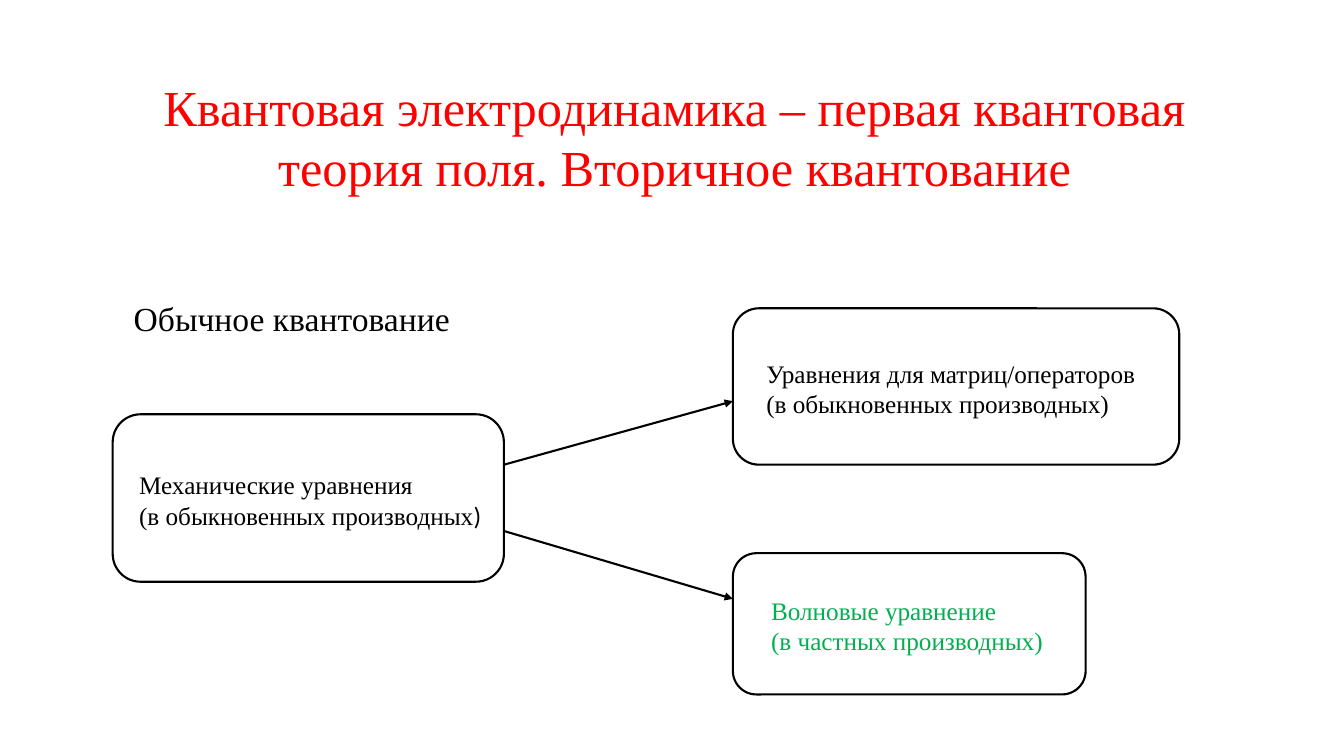
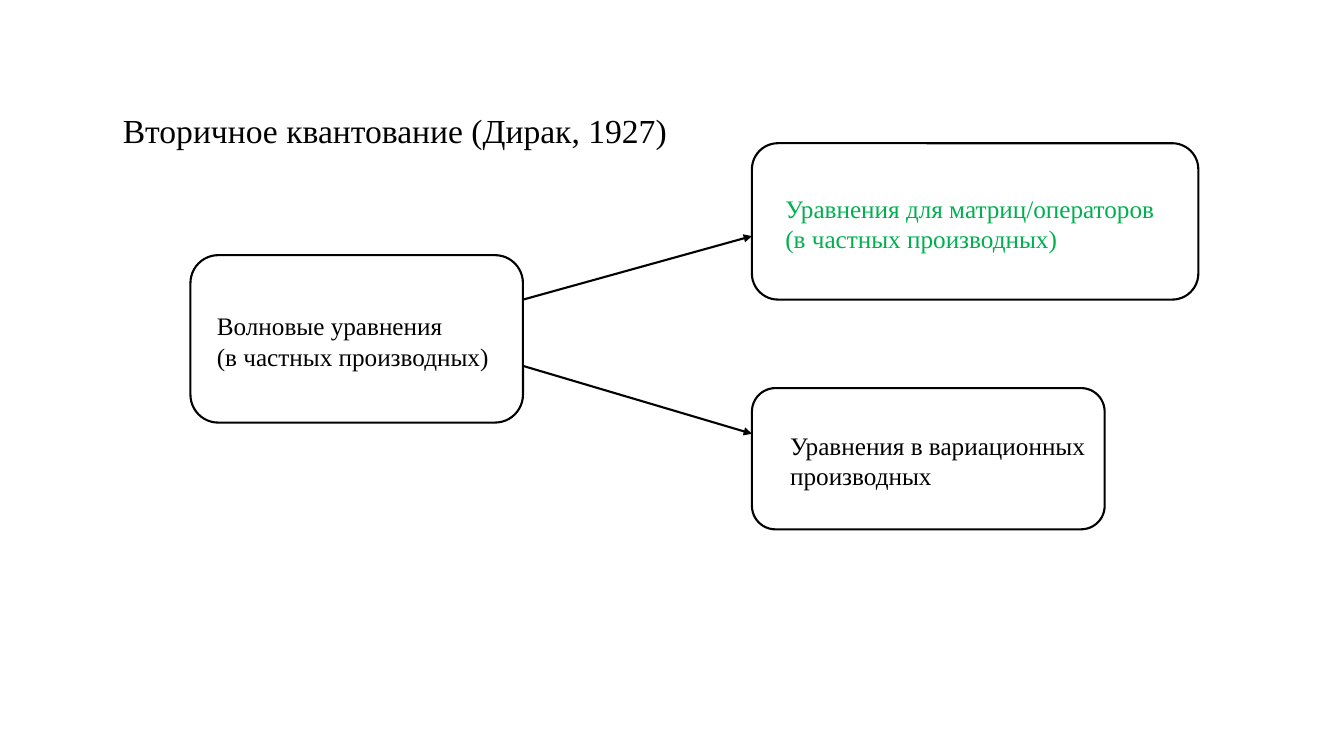
import lxml.etree
import pptx
import pptx.dml.color
import pptx.enum.shapes
import pptx.enum.text
import pptx.oxml.ns
import pptx.util
from pptx.util import Cm

RED = pptx.dml.color.RGBColor(0xFF, 0x00, 0x00)
BLACK = pptx.dml.color.RGBColor(0x00, 0x00, 0x00)
GREEN = pptx.dml.color.RGBColor(0x00, 0xB0, 0x50)
SERIF = "Times New Roman"
SANS = "Calibri"
LINE_WIDTH = pptx.util.Pt(1.5)
LEFT = pptx.enum.text.PP_ALIGN.LEFT
CENTER = pptx.enum.text.PP_ALIGN.CENTER


def write_lines(shape, lines, size, color, align=LEFT):
    """Write lines of (text, font) runs as paragraphs of a shape."""
    frame = shape.text_frame
    frame.word_wrap = True
    frame.auto_size = pptx.enum.text.MSO_AUTO_SIZE.NONE
    for index, line in enumerate(lines):
        para = frame.paragraphs[0] if index == 0 else frame.add_paragraph()
        para.alignment = align
        for text, font in line:
            span = para.add_run()
            span.text = text
            span.font.name = font
            span.font.size = pptx.util.Pt(size)
            span.font.color.rgb = color


def write_heading(shape, box, text, size=24, color=BLACK, align=LEFT):
    """Place and format a title placeholder or a heading text box."""
    shape.left, shape.top, shape.width, shape.height = map(Cm, box)
    shape.text_frame.vertical_anchor = pptx.enum.text.MSO_ANCHOR.TOP
    write_lines(shape, [[(text, SERIF)]], size, color, align)


def add_box(page, box, indent, lines, color=BLACK):
    """Add an outlined rounded box with left-aligned text."""
    shape = page.shapes.add_shape(
        pptx.enum.shapes.MSO_SHAPE.ROUNDED_RECTANGLE, *map(Cm, box))
    shape.shadow.inherit = False
    shape.fill.background()
    shape.line.color.rgb = BLACK
    shape.line.width = LINE_WIDTH
    frame = shape.text_frame
    frame.vertical_anchor = pptx.enum.text.MSO_ANCHOR.MIDDLE
    frame.margin_left, frame.margin_top = Cm(indent), Cm(0.1)
    frame.margin_right = frame.margin_bottom = 0
    write_lines(shape, lines, 18, color)


def add_arrow(page, start, end):
    """Add a straight arrow between two points."""
    arrow = page.shapes.add_connector(
        pptx.enum.shapes.MSO_CONNECTOR.STRAIGHT, *map(Cm, start + end))
    arrow.line.color.rgb = BLACK
    arrow.line.width = LINE_WIDTH
    qn = pptx.oxml.ns.qn
    lxml.etree.SubElement(arrow.line._get_or_add_ln(), qn("a:tailEnd"), type="triangle")
    lxml.etree.SubElement(arrow._element.spPr, qn("a:effectLst"))


def add_fork(page, left, top, hub_width, hub_drop, hub, upper, lower):
    """Draw a hub box with arrows to two boxes; left and top locate the upper box."""
    hub_right = left - 5.77
    add_box(page, (hub_right - hub_width, top + hub_drop, hub_width, 4.22), 0.46, *hub)
    add_box(page, (left, top, 11.25, 3.94), 0.65, *upper)
    add_box(page, (left, top + 6.17, 8.89, 3.56), 0.79, *lower)
    for start_drop, end_drop in ((3.94, 2.34), (5.61, 7.32)):
        add_arrow(page, (hub_right, top + start_drop), (left, top + end_drop))


def add_ordinary_slide(page):
    """Build the slide on ordinary quantization."""
    write_heading(page.shapes.title, (2.21, 1.78, 29.59, 3.33),
                  "Квантовая электродинамика – первая квантовая теория поля. "
                  "Вторичное квантование", 36, RED, CENTER)
    box = (3.12, 7.39, 9.5, 1.27)
    write_heading(page.shapes.add_textbox(*map(Cm, box)), box, "Обычное квантование")
    add_fork(page, 18.47, 7.77, 9.86, 2.67,
             ([[("Механические уравнения", SERIF)],
               [("(в обыкновенных производных", SERIF), (")", SANS)]],),
             ([[("Уравнения для матриц/операторов", SERIF)],
               [("(в обыкновенных производных)", SERIF)]],),
             ([[("Волновые уравнение", SERIF)],
               [("(в частных производных)", SERIF)]], GREEN))


def add_second_slide(page):
    """Build the slide on second quantization."""
    write_heading(page.shapes.title, (2.84, 2.64, 15.5, 1.27),
                  "Вторичное квантование (Дирак, 1927)")
    add_fork(page, 18.95, 3.61, 8.38, 2.82,
             ([[("Волновые уравнения", SERIF)],
               [("(в частных производных)", SERIF)]],),
             ([[("Уравнения для матриц/операторов", SERIF)],
               [("(в частных производных)", SERIF)]], GREEN),
             ([[("Уравнения в вариационных производных", SERIF)]],))


def main():
    """Build and save the deck."""
    deck = pptx.Presentation()
    deck.slide_width, deck.slide_height = Cm(33.87), Cm(19.05)
    title_only = deck.slide_layouts[5]
    for build in (add_ordinary_slide, add_second_slide):
        build(deck.slides.add_slide(title_only))
    deck.save("out.pptx")


if __name__ == "__main__":
    main()
